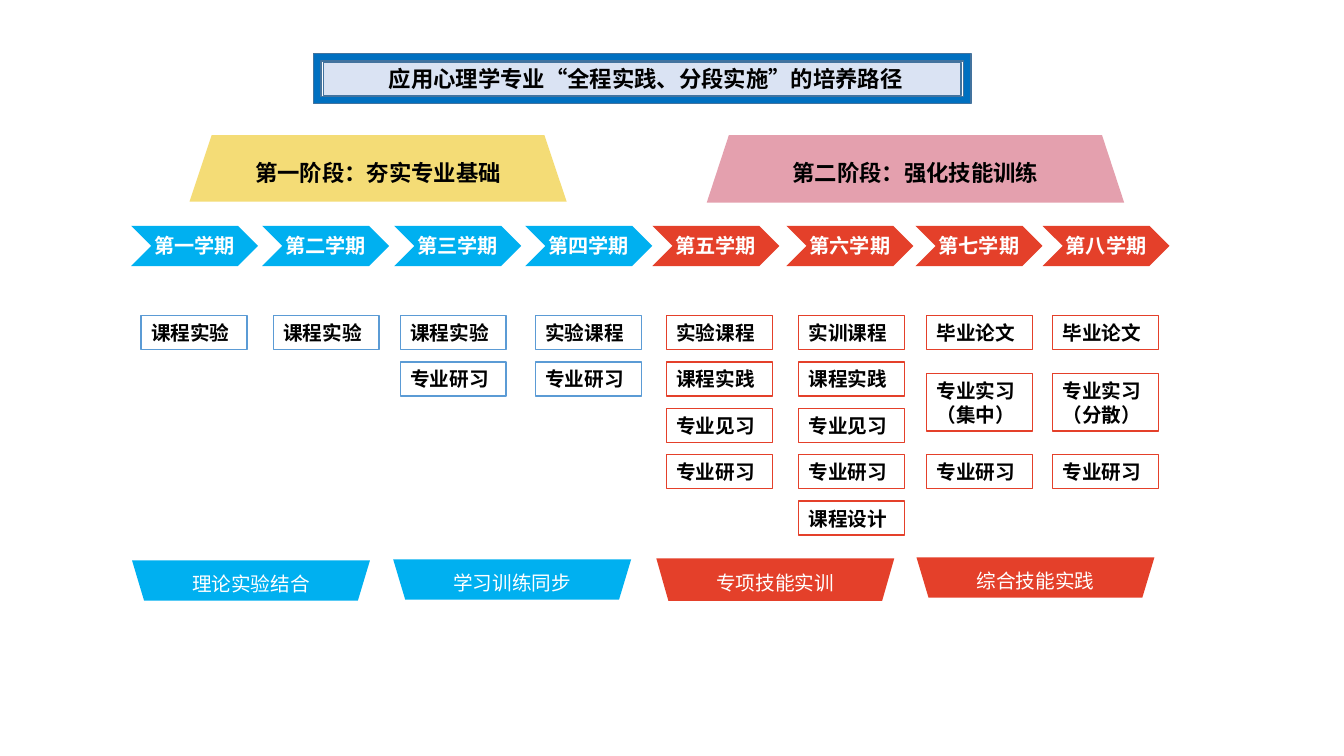
import lxml.etree
import pptx
import pptx.dml.color
import pptx.enum.shapes
import pptx.enum.text
import pptx.oxml.ns
import pptx.util

Inches = pptx.util.Inches
Pt = pptx.util.Pt
SHAPE = pptx.enum.shapes.MSO_SHAPE
ALIGN = pptx.enum.text.PP_ALIGN
MIDDLE = pptx.enum.text.MSO_ANCHOR.MIDDLE

BLUE, RED, BOX_BLUE = "00B0F0", "E4402A", "5B9BD5"
BLACK, WHITE = "000000", "FFFFFF"
YELLOW, PINK = "F4DC76", "E4A0AE"
TITLE_FILL, TITLE_FRAME, TITLE_LINE = "DAE3F3", "0070C0", "43739E"
SANS = "Noto Sans CJK SC"
SANS_JP = "Noto Sans CJK JP"

FIRST_ROW, ROW_STEP = 3.13, 0.46
BOX_WIDTH, LINE_HEIGHT = 1.05, 0.23

# Semester, chevron left, box left, [(row, text), ...]
SEMESTERS = [
    ("第一学期", 1.3, 1.4, [(0, "课程实验")]),
    ("第二学期", 2.6, 2.71, [(0, "课程实验")]),
    ("第三学期", 3.91, 3.97, [(0, "课程实验"), (1, "专业研习")]),
    ("第四学期", 5.21, 5.31, [(0, "实验课程"), (1, "专业研习")]),
    ("第五学期", 6.47, 6.61,
     [(0, "实验课程"), (1, "课程实践"), (2, "专业见习"), (3, "专业研习")]),
    ("第六学期", 7.8, 7.92,
     [(0, "实训课程"), (1, "课程实践"), (2, "专业见习"), (3, "专业研习"), (4, "课程设计")]),
    ("第七学期", 9.08, 9.19,
     [(0, "毕业论文"), (1.25, "专业实习\n（集中）"), (3, "专业研习")]),
    ("第八学期", 10.34, 10.44,
     [(0, "毕业论文"), (1.25, "专业实习\n（分散）"), (3, "专业研习")]),
]
STAGES = [
    ("第一阶段：夯实专业基础", (1.88, 1.34, 3.74, 0.66), YELLOW),
    ("第二阶段：强化技能训练", (7.01, 1.34, 4.14, 0.67), PINK),
]
GOALS = [
    ("理论实验结合", (1.31, 5.56, 2.36, 0.4), BLUE),
    ("学习训练同步", (3.9, 5.55, 2.36, 0.4), BLUE),
    ("专项技能实训", (6.51, 5.54, 2.36, 0.42), RED),
    ("综合技能实践", (9.09, 5.53, 2.36, 0.4), RED),
]


def color(value):
    return pptx.dml.color.RGBColor.from_string(value)


def paint(shape, fill, line=None):
    shape.shadow.inherit = False
    shape.fill.solid()
    shape.fill.fore_color.rgb = color(fill)
    if line:
        shape.line.color.rgb = color(line)
        shape.line.width = Pt(1)
    else:
        shape.line.fill.background()


def write(shape, text, size, text_color, font=SANS, bold=True,
          align=ALIGN.CENTER, spacing=None):
    frame = shape.text_frame
    frame.word_wrap = True
    frame.vertical_anchor = MIDDLE
    frame.text = text
    for paragraph in frame.paragraphs:
        paragraph.alignment = align
        paragraph.line_spacing = spacing
        paragraph.font.size = Pt(size)
        paragraph.font.bold = bold
        paragraph.font.color.rgb = color(text_color)
        paragraph.font.name = font
        # East Asian glyphs need their own typeface entry.
        properties = paragraph.font._element if hasattr(paragraph.font, "_element") \
            else paragraph.font._rPr
        east_asian = lxml.etree.SubElement(properties, pptx.oxml.ns.qn("a:ea"))
        east_asian.set("typeface", font if font in (SANS, SANS_JP) else SANS)


def add_preset(shapes, preset, box, fill, line=None):
    shape = shapes.add_shape(preset, *map(Inches, box))
    paint(shape, fill, line)
    return shape


def add_trapezoid(slide, box, top_inset, bottom_inset, fill):
    left, top, width, height = box
    right, bottom = left + width, top + height
    corners = [(left + top_inset, top), (right - top_inset, top),
               (right - bottom_inset, bottom), (left + bottom_inset, bottom)]
    points = [(Inches(x), Inches(y)) for x, y in corners]
    builder = slide.shapes.build_freeform(*points[0])
    builder.add_line_segments(points[1:], close=True)
    shape = builder.convert_to_shape()
    paint(shape, fill)
    return shape


def add_title(slide, box):
    left, top, width, height = box
    shapes = slide.shapes.add_group_shape().shapes
    add_preset(shapes, SHAPE.RECTANGLE,
               (left + 0.1, top + 0.09, width - 0.2, height - 0.17), TITLE_FILL, TITLE_LINE)
    frame = add_preset(shapes, SHAPE.FRAME, box, TITLE_FRAME, TITLE_LINE)
    frame.adjustments[0] = 0.15
    caption = shapes.add_textbox(*map(Inches, (left + 0.65, top + 0.06, 5.56, 0.37)))
    write(caption, "应用心理学专业“全程实践、分段实施”的培养路径", 16, BLACK,
          font="Calibri", align=ALIGN.LEFT)


def add_stage(slide, box, text, fill):
    write(add_trapezoid(slide, box, 0.22, 0, fill), text, 16, BLACK, spacing=1.3)


def add_goal(slide, box, text, fill):
    write(add_trapezoid(slide, box, 0, 0.12, fill), text, 14, WHITE,
          font=SANS_JP, bold=False, spacing=1.3)


def add_chevron(slide, box, text, fill):
    chevron = add_preset(slide.shapes, SHAPE.CHEVRON, box, fill)
    frame = chevron.text_frame
    frame.margin_left = frame.margin_right = frame.margin_top = frame.margin_bottom = 0
    write(chevron, text, 14.4, WHITE, font="Arial")


def add_courses(slide, left, top, courses, line):
    """Stack one semester's course boxes downwards from the given corner."""
    for row, text in courses:
        height = 0.34 + LINE_HEIGHT * text.count("\n")
        box = (left, top + row * ROW_STEP, BOX_WIDTH, height)
        course = add_preset(slide.shapes, SHAPE.RECTANGLE, box, WHITE, line)
        write(course, text, 14, BLACK, align=ALIGN.LEFT, spacing=Pt(17))


def main():
    presentation = pptx.Presentation()
    presentation.slide_width = Inches(13.33)
    presentation.slide_height = Inches(7.5)
    slide = presentation.slides.add_slide(presentation.slide_layouts[6])

    add_title(slide, (3.11, 0.53, 6.52, 0.5))
    for text, box, fill in STAGES:
        add_stage(slide, box, text, fill)
    for index, (semester, chevron_left, box_left, courses) in enumerate(SEMESTERS):
        fill, line = (BLUE, BOX_BLUE) if index < 4 else (RED, RED)
        add_chevron(slide, (chevron_left, 2.24, 1.26, 0.4), semester, fill)
        add_courses(slide, box_left, FIRST_ROW, courses, line)
    for text, box, fill in GOALS:
        add_goal(slide, box, text, fill)

    presentation.save("out.pptx")


if __name__ == "__main__":
    main()
